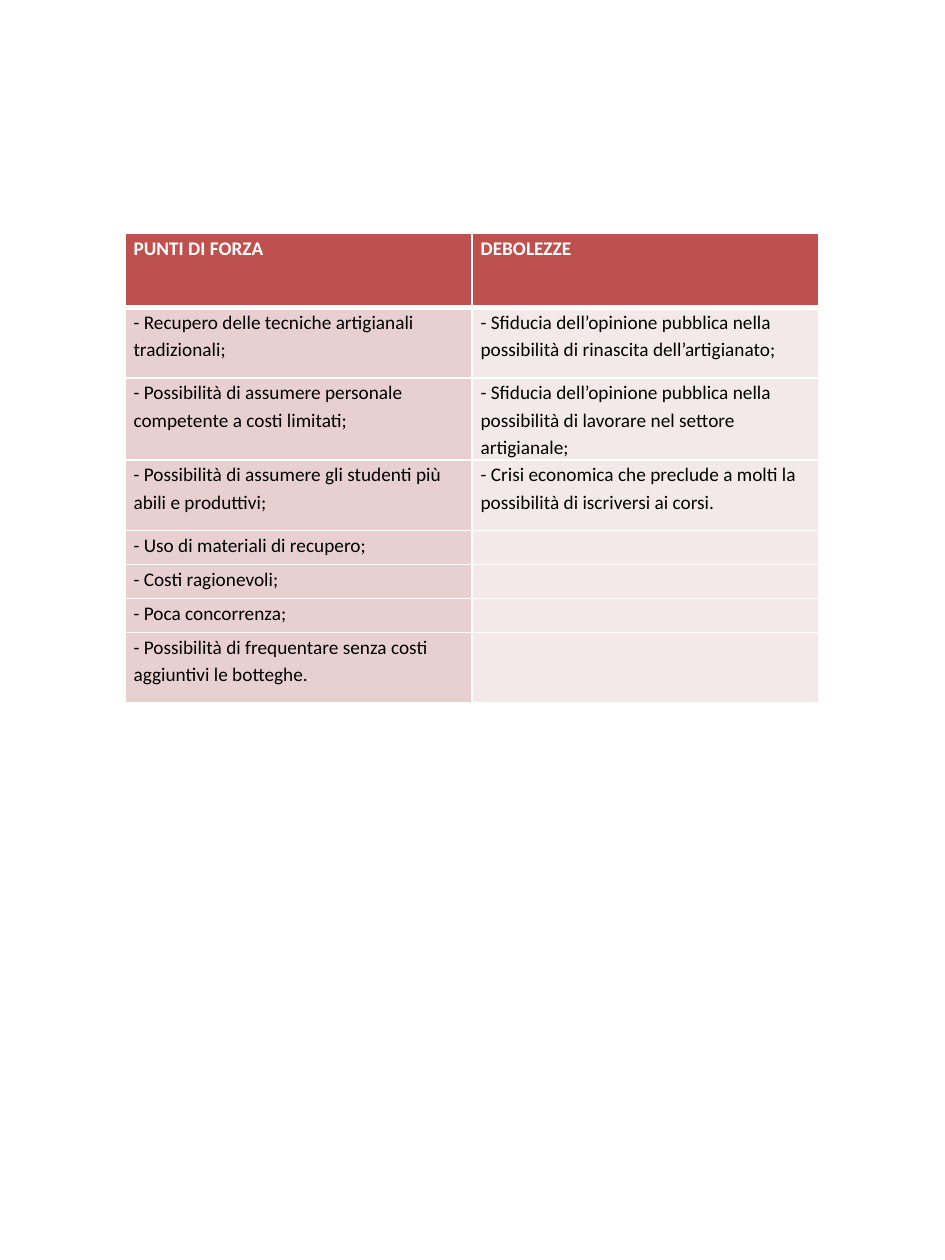
from lxml import etree
from pptx import Presentation
from pptx.dml.color import RGBColor
from pptx.oxml.ns import qn
from pptx.util import Inches, Pt

FONT, SIZE = "Calibri", 11
HEADER, STRENGTH, WEAKNESS = "C0504D", "E8D0D0", "F4E9E9"
WHITE, BLACK = "FFFFFF", "000000"
COL_WIDTH = 2.755
ROWS = [
    (0.59, "PUNTI DI FORZA", "DEBOLEZZE"),
    (0.56, "- Recupero delle tecniche artigianali tradizionali;",
     "- Sfiducia dell’opinione pubblica nella possibilità di rinascita dell’artigianato;"),
    (0.56, "- Possibilità di assumere personale competente a costi limitati;",
     "- Sfiducia dell’opinione pubblica nella possibilità di lavorare nel settore artigianale;"),
    (0.56, "- Possibilità di assumere gli studenti più abili e produttivi;",
     "- Crisi economica che preclude a molti la possibilità di iscriversi ai corsi."),
    (0.27, "- Uso di materiali di recupero;", ""),
    (0.27, "- Costi ragionevoli;", ""),
    (0.27, "- Poca concorrenza;", ""),
    (0.56, "- Possibilità di frequentare senza costi aggiuntivi le botteghe.", ""),
]


def rgb(value):
    return RGBColor.from_string(value)


def write(p, text, color=BLACK, bold=False, size=SIZE, spacing=1.15):
    p.line_spacing = spacing
    if not text:
        etree.SubElement(p._p, qn("a:endParaRPr"), sz=str(size * 100))
        return
    r = p.add_run()
    r.text = text
    r.font.name, r.font.size, r.font.bold = FONT, Pt(size), bold
    r.font.color.rgb = rgb(color)


class Deck:
    """Holds the table style and the current slide."""

    def __init__(self, width, height):
        self.prs = Presentation()
        self.prs.slide_width, self.prs.slide_height = Inches(width), Inches(height)
        self.s = self.prs.slides.add_slide(self.prs.slide_layouts[6])

    def border(self, cell, side, width, color=WHITE):
        ln = etree.SubElement(cell._tc.get_or_add_tcPr(), qn(f"a:ln{side}"), w=str(Pt(width)))
        fill = etree.SubElement(ln, qn("a:solidFill"))
        etree.SubElement(fill, qn("a:srgbClr"), val=color)

    def cell(self, cell, text, row, col):
        cell.margin_left = cell.margin_right = Inches(0.07)
        cell.margin_top = cell.margin_bottom = 0
        heavy = {(0, "B"), (1, "T")}
        for side in "LRTB":
            self.border(cell, side, 3 if (row, side) in heavy else 1)
        cell.fill.solid()
        cell.fill.fore_color.rgb = rgb(HEADER if row == 0 else (STRENGTH, WEAKNESS)[col])
        write(cell.text_frame.paragraphs[0], text,
              color=WHITE if row == 0 else BLACK, bold=row == 0)

    def table(self, left, top, rows):
        height = sum(row[0] for row in rows)
        table = self.s.shapes.add_table(len(rows), 2, Inches(left), Inches(top),
                                        Inches(2 * COL_WIDTH), Inches(height)).table
        for column in table.columns:
            column.width = Inches(COL_WIDTH)
        for i, (row_height, *texts) in enumerate(rows):
            table.rows[i].height = Inches(row_height)
            for j, text in enumerate(texts):
                self.cell(table.cell(i, j), text, i, j)


def main():
    deck = Deck(7.5, 10)
    deck.table(0.99, 1.85, ROWS)
    deck.prs.save("out.pptx")


if __name__ == "__main__":
    main()
